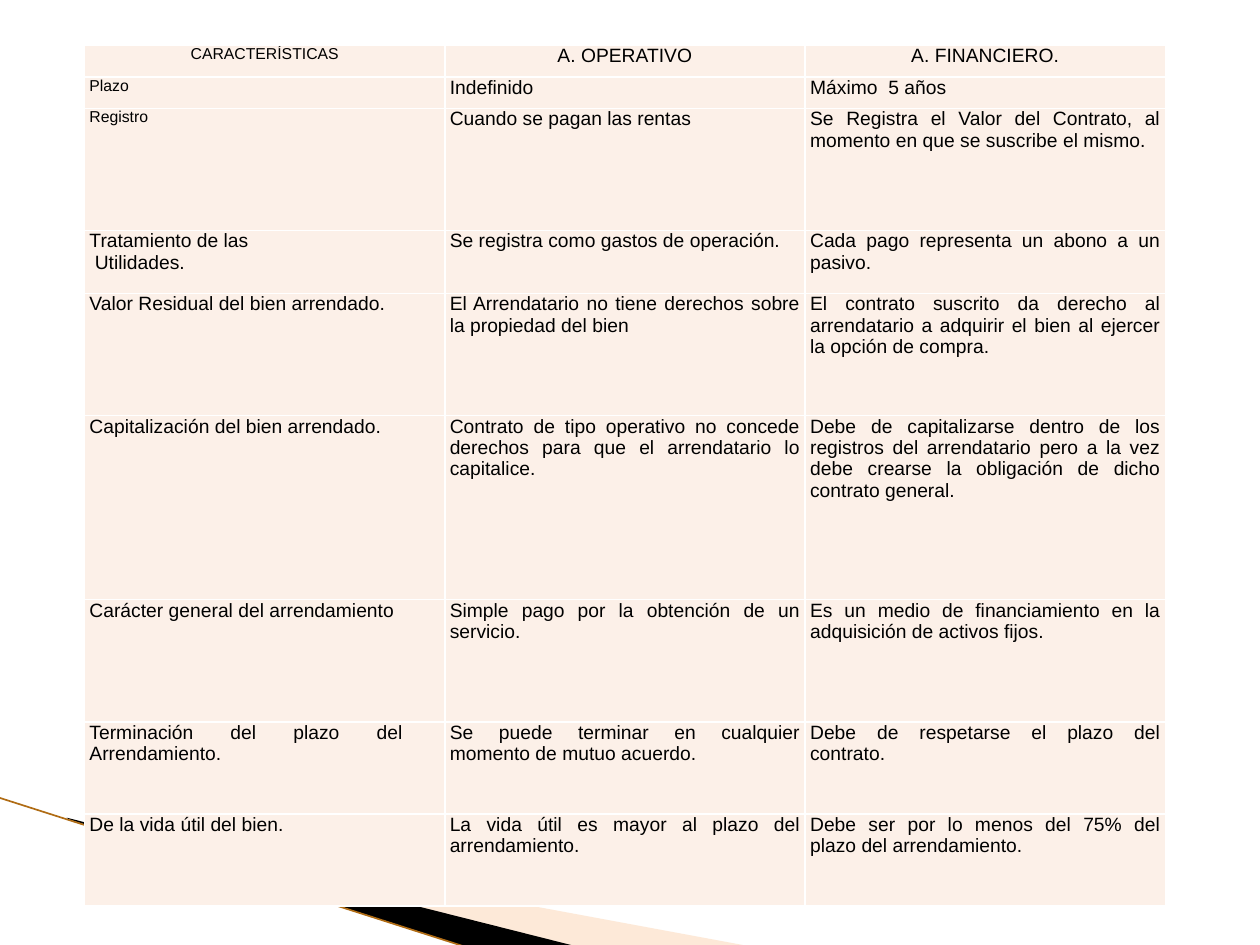
from typing import NamedTuple

from lxml.etree import SubElement
from pptx import Presentation
from pptx.dml.color import RGBColor
from pptx.enum.shapes import MSO_CONNECTOR
from pptx.enum.text import PP_ALIGN
from pptx.oxml.ns import qn
from pptx.util import Inches, Pt

PEACH = RGBColor(0xFB, 0xC9, 0x9E)
BLACK = RGBColor(0x00, 0x00, 0x00)
WHITE = RGBColor(0xFF, 0xFF, 0xFF)
BROWN = RGBColor(0xB0, 0x6C, 0x14)
CELL_FILL = RGBColor(0xFC, 0xF0, 0xE8)

COLUMN_WIDTH = 2.86
CELL_MARGINS = {"margin_left": Inches(0.04), "margin_right": Inches(0.04),
                "margin_top": 0, "margin_bottom": 0}


class Band(NamedTuple):
    points: list[tuple[float, float]]
    color: RGBColor
    opacity: int


class Row(NamedTuple):
    height: float
    texts: tuple[str, str, str]
    label_size: int = 11


BANDS = [
    Band([(0.55, 6.51), (5.95, 7.51), (4.56, 7.51), (0.55, 6.5)], PEACH, 40),
    Band([(0.53, 6.49), (4.57, 7.51), (3.72, 7.52), (0.54, 6.5)], BLACK, 100),
]

ROWS = [
    Row(0.25, ("CARACTERÍSTICAS", "A. OPERATIVO", "A. FINANCIERO."), 9),
    Row(0.25, ("Plazo", "Indefinido", "Máximo  5 años"), 9),
    Row(0.97, ("Registro", "Cuando se pagan las rentas",
               "Se Registra el Valor del Contrato, al momento en que se suscribe el mismo."), 9),
    Row(0.5, ("Tratamiento de las\n Utilidades.",
              "Se registra como gastos de operación.",
              "Cada pago representa un abono a un pasivo.")),
    Row(0.97, ("Valor Residual del bien arrendado.",
               "El Arrendatario no tiene derechos sobre la propiedad del bien",
               "El contrato suscrito da derecho al arrendatario a adquirir el bien "
               "al ejercer la opción de compra.")),
    Row(1.46, ("Capitalización del bien arrendado.",
               "Contrato de tipo operativo no concede derechos para que el "
               "arrendatario lo capitalice.",
               "Debe de capitalizarse dentro de los registros del arrendatario pero "
               "a la vez debe crearse la obligación de dicho contrato general.")),
    Row(0.97, ("Carácter general del arrendamiento",
               "Simple pago por la obtención de un servicio.",
               "Es un medio de financiamiento en la adquisición de activos fijos.")),
    Row(0.73, ("Terminación del plazo del  Arrendamiento.",
               "Se puede terminar en cualquier momento de mutuo acuerdo.",
               "Debe de respetarse el plazo del contrato.")),
    Row(0.73, ("De la vida útil del bien.",
               "La vida útil es mayor al plazo del arrendamiento.",
               "Debe ser por lo menos del 75% del plazo del arrendamiento.")),
]


def draw_band(s, band: Band) -> None:
    start, *rest = [(Inches(x), Inches(y)) for x, y in band.points]
    builder = s.shapes.build_freeform(*start)
    builder.add_line_segments(rest, close=True)
    sp = builder.convert_to_shape()
    sp.shadow.inherit = False
    sp.line.fill.background()
    sp.fill.solid()
    sp.fill.fore_color.rgb = band.color
    if band.opacity < 100:
        color = sp.fill._xPr.find(qn("a:solidFill"))[0]
        SubElement(color, qn("a:alpha")).set("val", str(band.opacity * 1000))


def draw_edge(s) -> None:
    line = s.shapes.add_connector(MSO_CONNECTOR.STRAIGHT, Inches(-0.01), Inches(6.33),
                                  Inches(3.71), Inches(7.52))
    line.line.color.rgb = BROWN
    line.line.width = Pt(0.95)
    SubElement(line._element.spPr, qn("a:effectLst"))


def add_borders(cell) -> None:
    tc_pr = cell._tc.get_or_add_tcPr()
    for i, side in enumerate(("lnL", "lnR", "lnT", "lnB")):
        ln = tc_pr.makeelement(qn(f"a:{side}"), {"w": str(Pt(1))})
        fill = SubElement(ln, qn("a:solidFill"))
        SubElement(fill, qn("a:srgbClr")).set("val", str(WHITE))
        tc_pr.insert(i, ln)


def fill_cell(cell, text: str, size: int, align: PP_ALIGN) -> None:
    for name, value in CELL_MARGINS.items():
        setattr(cell, name, value)
    cell.fill.solid()
    cell.fill.fore_color.rgb = CELL_FILL
    add_borders(cell)
    cell.text = text
    font_format = {"name": "Arial", "size": Pt(size), "bold": False}
    for p in cell.text_frame.paragraphs:
        p.alignment = align
        for r in p.runs:
            for name, value in font_format.items():
                setattr(r.font, name, value)
            r.font.color.rgb = BLACK


def draw_table(s, rows: list[Row]) -> None:
    columns = len(rows[0].texts)
    table = s.shapes.add_table(
        len(rows), columns, Inches(0.67), Inches(0.36), Inches(COLUMN_WIDTH * columns),
        Inches(sum(row.height for row in rows))).table
    table.first_row = table.horz_banding = False
    for column in table.columns:
        column.width = Inches(COLUMN_WIDTH)
    for i, row in enumerate(rows):
        table.rows[i].height = Inches(row.height)
        align = PP_ALIGN.JUSTIFY if i else PP_ALIGN.CENTER
        for j, text in enumerate(row.texts):
            fill_cell(table.cell(i, j), text, 11 if j else row.label_size, align)


def main() -> None:
    prs = Presentation()
    prs.slide_width, prs.slide_height = Inches(10), Inches(7.5)
    s = prs.slides.add_slide(prs.slide_layouts[6])

    # Decorative corner
    for band in BANDS:
        draw_band(s, band)
    draw_edge(s)

    # Comparison of lease types
    draw_table(s, ROWS)
    prs.save("out.pptx")


if __name__ == "__main__":
    main()
